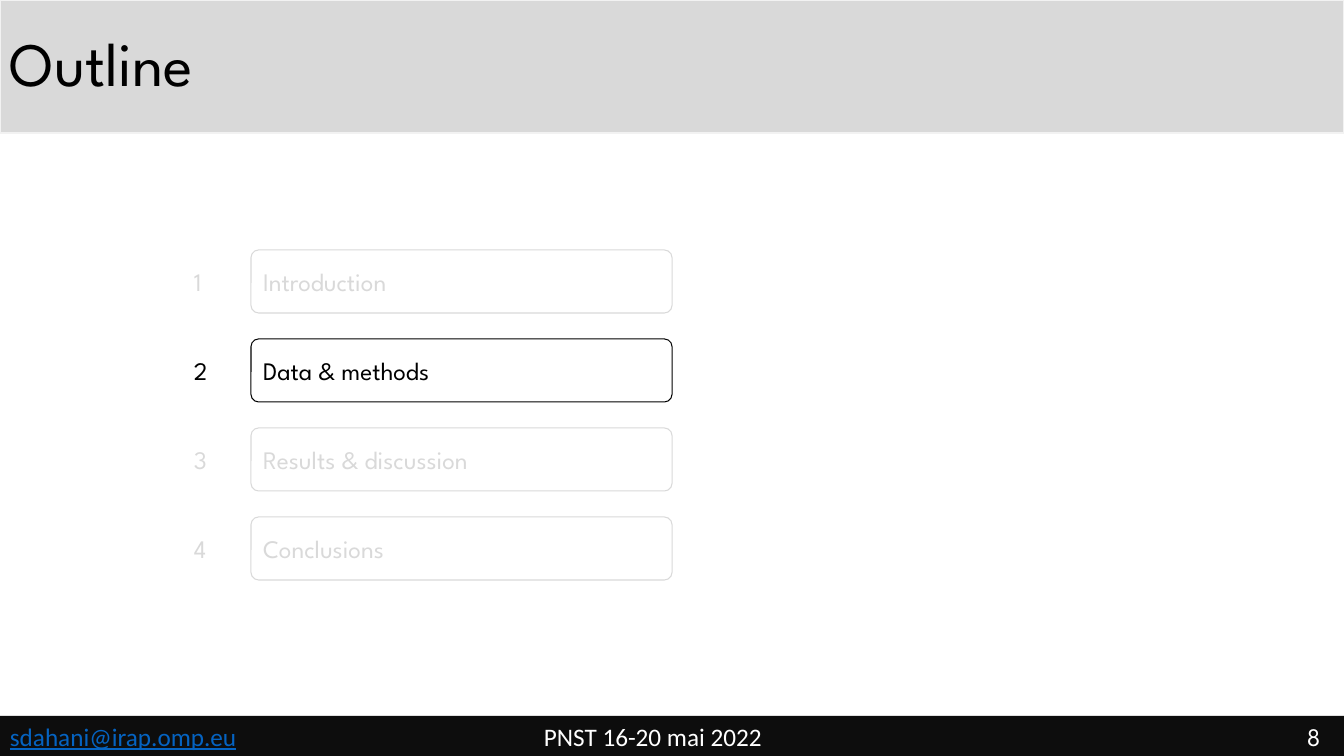
"""Build the outline slide with its second section highlighted."""
from pptx import Presentation, util as u
from pptx.dml.color import RGBColor
from pptx.enum import shapes, text

PX = 12192000 / 1344
BLACK, GREY, WHITE = "000000", "D9D9D9", "FFFFFF"
SPARTAN = "League Spartan"


def color(value):
    return RGBColor.from_string(value)


def add_box(kind, box, words, ink, font=SPARTAN, size=18, fill=None, line=None, width=0.75):
    left, top, wide, high = (u.Emu(round(length * PX)) for length in box)
    if kind is None:
        shape = slide.shapes.add_textbox(left, top, wide, high)
    else:
        shape = slide.shapes.add_shape(kind, left, top, wide, high)
        shape.shadow.inherit = False
        if fill:
            shape.fill.solid()
            shape.fill.fore_color.rgb = color(fill)
        else:
            shape.fill.background()
        if line:
            shape.line.color.rgb = color(line)
            shape.line.width = u.Pt(width)
        else:
            shape.line.fill.background()
        shape.text_frame.vertical_anchor = text.MSO_ANCHOR.MIDDLE
    shape.text_frame.word_wrap = True
    paragraph = shape.text_frame.paragraphs[0]
    paragraph.text = words
    paragraph.alignment = text.PP_ALIGN.LEFT
    paragraph.font.name = font
    paragraph.font.size = u.Pt(size)
    paragraph.font.color.rgb = color(ink)
    return shape


presentation = Presentation()
presentation.slide_width = u.Emu(round(1344 * PX))
presentation.slide_height = u.Emu(round(756 * PX))
slide = presentation.slides.add_slide(presentation.slide_layouts[6])

rectangle = shapes.MSO_SHAPE.RECTANGLE
title = add_box(rectangle, (0, 0, 1344, 133), "Outline", BLACK, size=44,
                fill=GREY, line="F2F2F2", width=1)
title.text_frame.paragraphs[0].line_spacing = 0.9
add_box(rectangle, (0, 716, 1344, 40), "", WHITE, fill="0D0D0D")

sections = ["Introduction", "Data & methods", "Results & discussion", "Conclusions"]
current = 2
for number, section in enumerate(sections, 1):
    top = 250 + 89 * (number - 1)
    ink = BLACK if number == current else GREY
    frame = add_box(shapes.MSO_SHAPE.ROUNDED_RECTANGLE, (251, top, 421, 63),
                    section, ink, line=ink)
    frame.adjustments[0] = 0.12
    add_box(None, (184, top + 11, 34, 40), str(number), ink)

email = add_box(None, (0, 716, 255, 40), "sdahani@irap.omp.eu", "0563C1", font="Calibri")
email.text_frame.paragraphs[0].font.underline = True
add_box(None, (534, 716, 265, 40), "PNST 16-20 mai 2022", WHITE, font="Calibri")
add_box(None, (1297, 716, 59, 40), "8", WHITE)

presentation.save("out.pptx")
